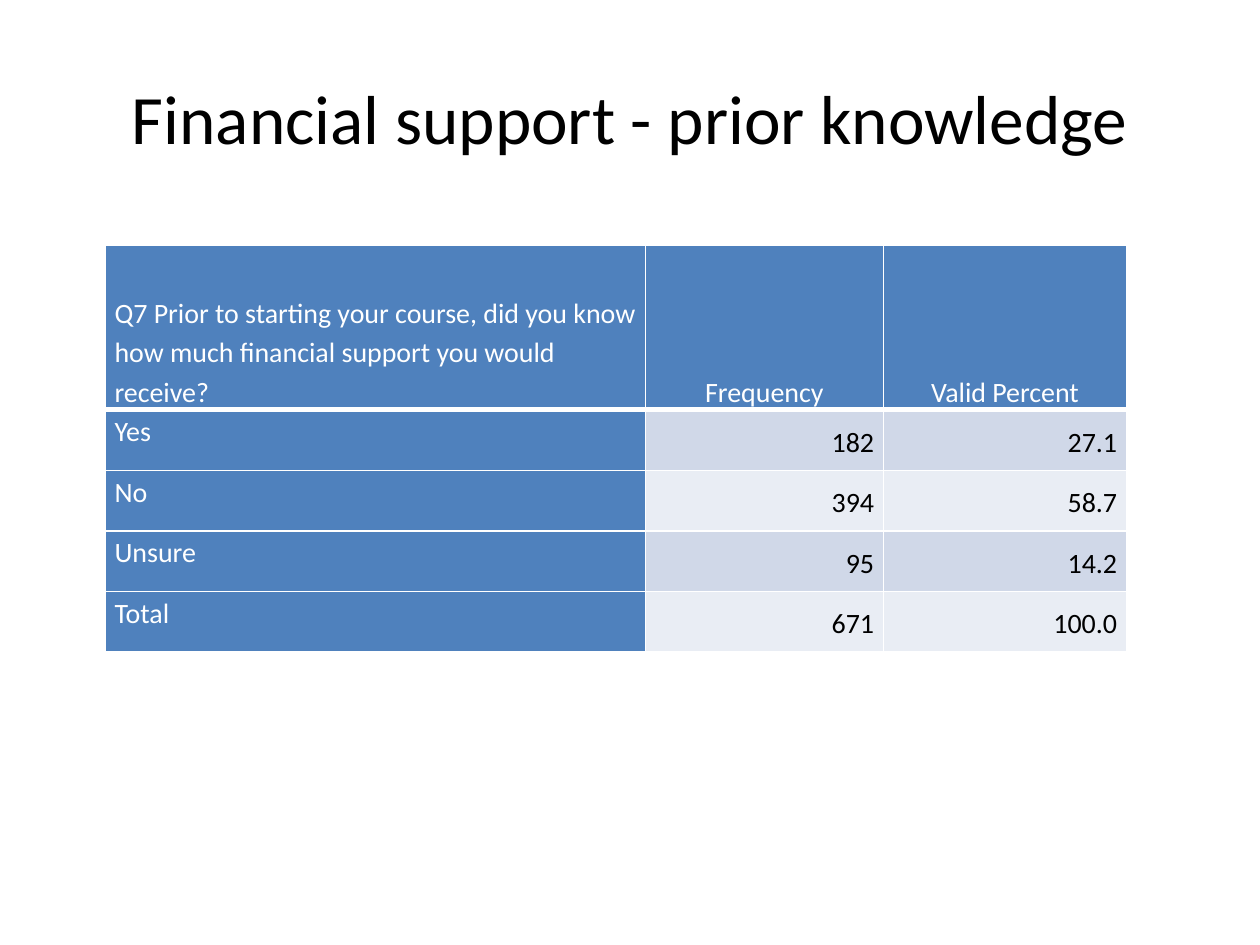
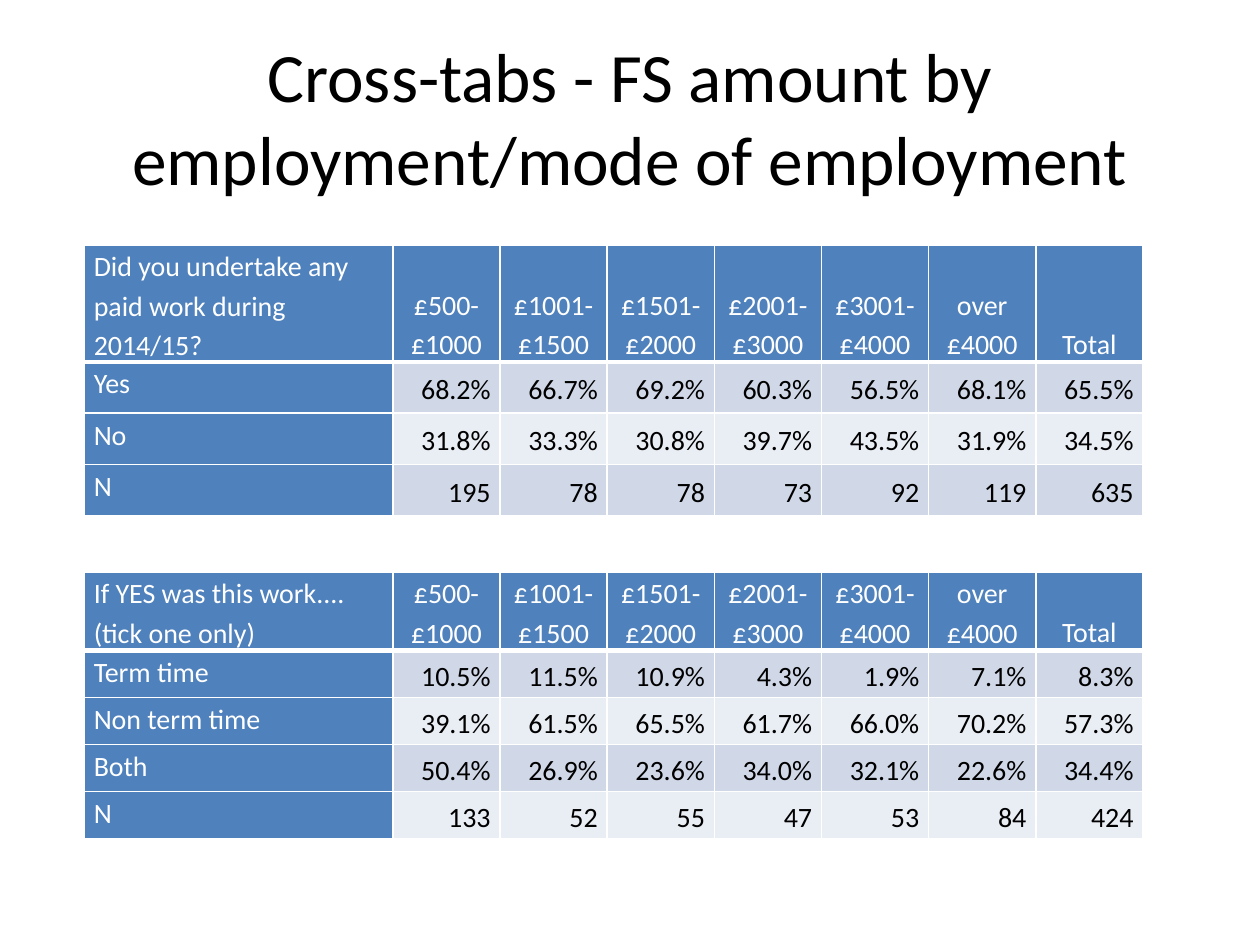
import lxml.etree
import pptx
import pptx.dml.color
import pptx.enum.text
import pptx.oxml.ns
import pptx.util

Cm = pptx.util.Cm
Pt = pptx.util.Pt
ALIGN = pptx.enum.text.PP_ALIGN
ANCHOR = pptx.enum.text.MSO_ANCHOR

BANDS = ["£500-£1000", "£1001-£1500", "£1501-£2000", "£2001-£3000",
         "£3001-£4000", "over £4000", "Total"]
BAND_COLS = [6.22] + [2.16] * len(BANDS)

SLIDES = [
    {"title": "Financial support - prior knowledge",
     "tables": [
         {"left": 2.12, "top": 4.94, "cols": [10.89, 4.8, 4.9],
          "header_height": 3.32, "row_height": 1.22,
          "rows": [
              ["Q7 Prior to starting your course, did you know how much "
               "financial support you would receive?", "Frequency", "Valid Percent"],
              ["Yes", "182", "27.1"],
              ["No", "394", "58.7"],
              ["Unsure", "95", "14.2"],
              ["Total", "671", "100.0"],
          ]},
     ]},
    {"title": "Cross-tabs - FS amount by employment/mode of employment",
     "tables": [
         {"left": 1.7, "top": 4.94, "cols": BAND_COLS,
          "header_height": 2.36, "row_height": 1.03,
          "rows": [
              ["Did you undertake any paid work during 2014/15?"] + BANDS,
              ["Yes", "68.2%", "66.7%", "69.2%", "60.3%", "56.5%", "68.1%", "65.5%"],
              ["No", "31.8%", "33.3%", "30.8%", "39.7%", "43.5%", "31.9%", "34.5%"],
              ["N", "195", "78", "78", "73", "92", "119", "635"],
          ]},
         {"left": 1.7, "top": 11.53, "cols": BAND_COLS,
          "header_height": 1.58, "row_height": 0.95,
          "rows": [
              ["If YES was this work.... (tick one only)"] + BANDS,
              ["Term time", "10.5%", "11.5%", "10.9%", "4.3%", "1.9%", "7.1%", "8.3%"],
              ["Non term time", "39.1%", "61.5%", "65.5%", "61.7%", "66.0%", "70.2%", "57.3%"],
              ["Both", "50.4%", "26.9%", "23.6%", "34.0%", "32.1%", "22.6%", "34.4%"],
              ["N", "133", "52", "55", "47", "53", "84", "424"],
          ]},
     ]},
]

COLORS = {"text": "000000", "light": "FFFFFF", "head": "4F81BD",
          "odd": "D0D8E8", "even": "E9EDF4"}
FONT = "Calibri"


def rgb(name):
    return pptx.dml.color.RGBColor.from_string(COLORS[name])


def style_text(p, size, color, align):
    p.alignment = align
    for r in p.runs:
        r.font.name = FONT
        r.font.size = Pt(size)
        r.font.bold = False
        r.font.color.rgb = rgb(color)


def set_borders(cell, bottom):
    qn = pptx.oxml.ns.qn
    tc_pr = cell._tc.get_or_add_tcPr()
    for side, width in (("L", 1), ("R", 1), ("T", 1), ("B", bottom)):
        ln = lxml.etree.SubElement(tc_pr, qn("a:ln" + side), w=str(Pt(width)))
        fill = lxml.etree.SubElement(ln, qn("a:solidFill"))
        lxml.etree.SubElement(fill, qn("a:srgbClr"), val=COLORS["light"])


def add_title(s, text):
    sp = s.shapes.add_textbox(Cm(1.27), Cm(0.76), Cm(22.86), Cm(3.18))
    tf = sp.text_frame
    tf.word_wrap = True
    tf.vertical_anchor = ANCHOR.MIDDLE
    tf.text = text
    style_text(tf.paragraphs[0], 39.6, "text", ALIGN.CENTER)


def fill_cell(cell, text, row, col):
    if row == 0:
        anchor, align = ANCHOR.BOTTOM, ALIGN.CENTER if col else ALIGN.LEFT
    elif col == 0:
        anchor, align = ANCHOR.TOP, ALIGN.LEFT
    else:
        anchor, align = ANCHOR.MIDDLE, ALIGN.RIGHT
    is_head = row == 0 or col == 0
    set_borders(cell, 3 if row == 0 else 1)
    cell.fill.solid()
    cell.fill.fore_color.rgb = rgb("head" if is_head else "odd" if row % 2 else "even")
    cell.margin_left = cell.margin_right = Cm(0.19)
    cell.margin_top = cell.margin_bottom = 0
    cell.vertical_anchor = anchor
    cell.text_frame.text = text
    p = cell.text_frame.paragraphs[0]
    p.line_spacing = 1.15
    style_text(p, 16, "light" if is_head else "text", align)


def add_data_table(s, spec_table):
    rows, cols = spec_table["rows"], spec_table["cols"]
    heights = [spec_table["header_height"]] + [spec_table["row_height"]] * (len(rows) - 1)
    table = s.shapes.add_table(len(rows), len(cols), Cm(spec_table["left"]),
                               Cm(spec_table["top"]), Cm(sum(cols)), Cm(sum(heights))).table
    for column, width in zip(table.columns, cols):
        column.width = Cm(width)
    for i, (values, height) in enumerate(zip(rows, heights)):
        table.rows[i].height = Cm(height)
        for j, value in enumerate(values):
            fill_cell(table.cell(i, j), value, i, j)


def main():
    prs = pptx.Presentation()
    prs.slide_width, prs.slide_height = Cm(25.4), Cm(19.05)
    for content in SLIDES:
        s = prs.slides.add_slide(prs.slide_layouts[6])
        add_title(s, content["title"])
        for table in content["tables"]:
            add_data_table(s, table)
    prs.save("out.pptx")


if __name__ == "__main__":
    main()
